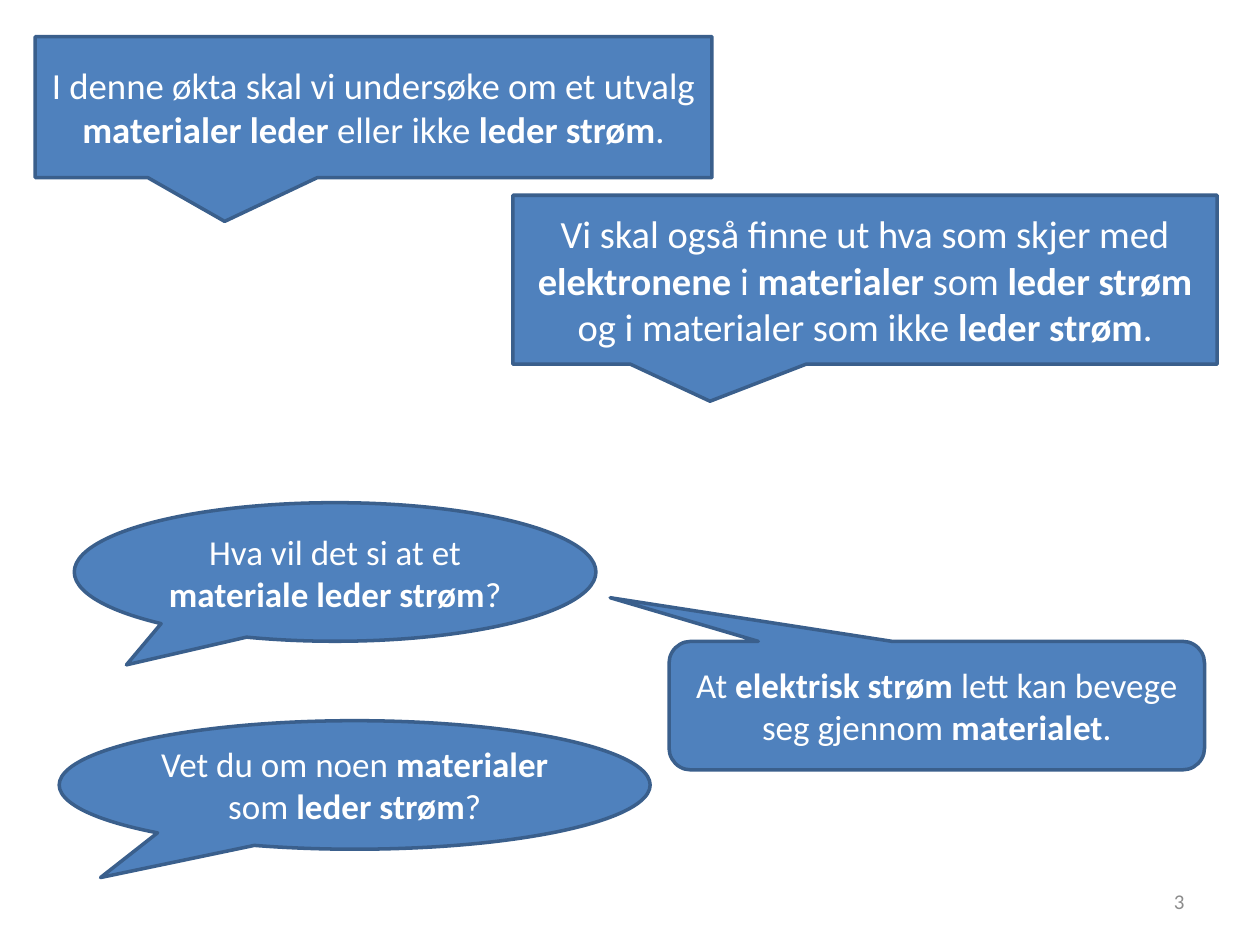
import pptx
import pptx.util
from pptx.dml.color import RGBColor
from pptx.enum.shapes import MSO_SHAPE
from pptx.enum.text import MSO_ANCHOR, PP_ALIGN
from pptx.util import Inches

COLORS = {"bubble": "4F81BD", "outline": "3A5F8C", "text": "FFFFFF", "number": "8C8C8C"}
FONT = "Calibri"


def color(name):
    return RGBColor.from_string(COLORS[name])


def style_text(shape, size, color_name, alignment):
    frame = shape.text_frame
    frame.word_wrap = True
    frame.vertical_anchor = MSO_ANCHOR.MIDDLE
    para = frame.paragraphs[0]
    para.alignment = alignment
    para.font.name = FONT
    para.font.size = pptx.util.Pt(size)
    para.font.color.rgb = color(color_name)
    return para


def add_bubble(page, kind, place, tail, size, text):
    """Add a callout whose tail is set by its adjustments; *stars* mark bold text."""
    bubble = page.shapes.add_shape(kind, *map(Inches, place))
    bubble.shadow.inherit = False
    for index, value in enumerate(tail):
        bubble.adjustments[index] = value
    bubble.fill.solid()
    bubble.fill.fore_color.rgb = color("bubble")
    bubble.line.color.rgb = color("outline")
    bubble.line.width = pptx.util.Pt(2)
    para = style_text(bubble, size, "text", PP_ALIGN.CENTER)
    for index, part in enumerate(text.split("*")):
        span = para.add_run()
        span.text = part
        span.font.bold = index % 2 == 1


def add_page_number(page, number):
    box = page.shapes.add_textbox(Inches(7.17), Inches(6.95), Inches(2.33), Inches(0.4))
    para = style_text(box, 12, "number", PP_ALIGN.RIGHT)
    para.add_run().text = number


def main():
    deck = pptx.Presentation()
    deck.slide_width, deck.slide_height = Inches(10), Inches(7.5)
    page = deck.slides.add_slide(deck.slide_layouts[6])

    ellipse = MSO_SHAPE.OVAL_CALLOUT
    rounded = MSO_SHAPE.ROUNDED_RECTANGULAR_CALLOUT
    rectangle = MSO_SHAPE.RECTANGULAR_CALLOUT
    bubbles = [
        (ellipse, (0.59, 3.99, 4.14, 1.1), (-0.4, 0.67), 20,
         "Hva vil det si at et *materiale leder strøm*?"),
        (ellipse, (0.47, 5.72, 4.69, 1.02), (-0.43, 0.72), 20,
         "Vet du om noen *materialer* som *leder strøm*?"),
        (rounded, (5.31, 5.09, 4.25, 1.02), (-0.61, -0.84, 0.17), 20,
         "At *elektrisk strøm* lett kan bevege seg gjennom *materialet*."),
        (rectangle, (0.28, 0.29, 5.37, 1.12), (-0.22, 0.81), 21,
         "I denne økta skal vi undersøke om et utvalg "
         "*materialer leder* eller ikke *leder strøm*."),
        (rectangle, (4.07, 1.55, 5.59, 1.34), (-0.22, 0.72), 22,
         "Vi skal også finne ut hva som skjer med *elektronene* i *materialer* "
         "som *leder strøm* og i materialer som ikke *leder strøm*."),
    ]
    for bubble in bubbles:
        add_bubble(page, *bubble)
    add_page_number(page, "3")
    deck.save("out.pptx")


if __name__ == "__main__":
    main()
